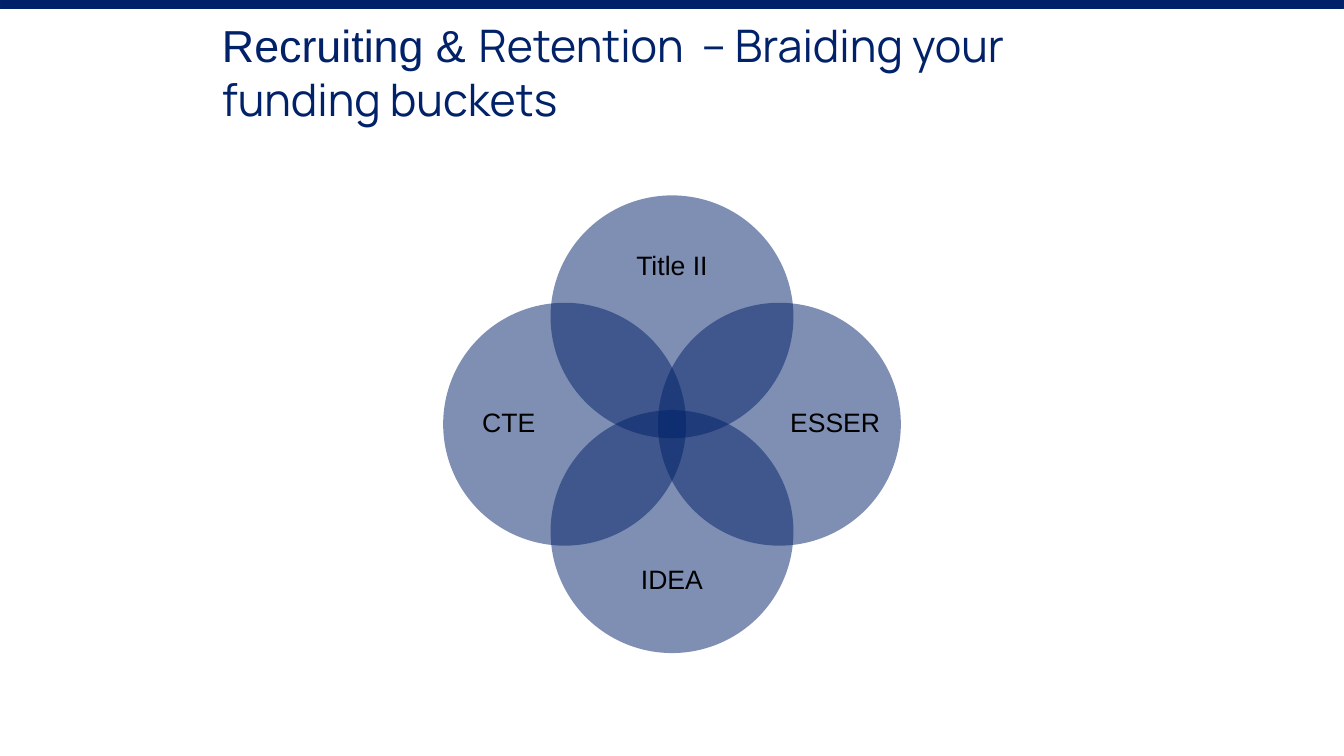
from lxml import etree
from pptx import Presentation
from pptx.dml.color import RGBColor
from pptx.enum.shapes import MSO_SHAPE
from pptx.enum.text import MSO_ANCHOR, PP_ALIGN
from pptx.oxml.ns import qn
from pptx.util import Pt

RECT, OVAL = MSO_SHAPE.RECTANGLE, MSO_SHAPE.OVAL
TOP, MIDDLE = MSO_ANCHOR.TOP, MSO_ANCHOR.MIDDLE
LEFT, CENTER = PP_ALIGN.LEFT, PP_ALIGN.CENTER

NAVY, BAR_NAVY, BLACK = "012169", "002069", "000000"
SLIDE_W, SLIDE_H = 960, 540
CENTER_X, CENTER_Y = 480, 303
DIAMETER = 173.5
CIRCLE_OFFSET = 76.7
# name, x direction, y direction, label offset, label width, label height
FUNDS = [
    ("Title II", 0, -1, 112.3, 133, 55),
    ("ESSER", 1, 0, 116.6, 67, 133),
    ("IDEA", 0, 1, 112.3, 133, 55),
    ("CTE", -1, 0, 116.6, 67, 133),
]


def rgb(color):
    return RGBColor.from_string(color)


def add_filled(slide, kind, x, y, w, h, fill, line=None, opacity=None):
    """Add a preset shape; opacity is a percentage."""
    s = slide.shapes.add_shape(kind, Pt(x), Pt(y), Pt(w), Pt(h))
    s.shadow.inherit = False
    s.fill.solid()
    s.fill.fore_color.rgb = rgb(fill)
    if line:
        s.line.color.rgb = rgb(line)
        s.line.width = Pt(0.75)
    else:
        s.line.fill.background()
    if opacity is not None:
        color = s.fill._xPr.find(qn("a:solidFill"))[0]
        etree.SubElement(color, qn("a:alpha"), val=str(opacity * 1000))


def add_text(slide, x, y, w, h, runs, size, color, align=LEFT, anchor=TOP, spacing=1.0):
    """Add a one-paragraph text box; runs are (text, font name) pairs."""
    tf = slide.shapes.add_textbox(Pt(x), Pt(y), Pt(w), Pt(h)).text_frame
    frame_format = dict(word_wrap=True, vertical_anchor=anchor, margin_left=0,
                        margin_top=0, margin_right=0, margin_bottom=0)
    for name, value in frame_format.items():
        setattr(tf, name, value)
    p = tf.paragraphs[0]
    p.alignment = align
    p.line_spacing = spacing
    for text, font in runs:
        r = p.add_run()
        r.text = text
        r.font.name = font
        r.font.size = Pt(size)
        r.font.color.rgb = rgb(color)


def add_fund(slide, name, dx, dy, offset, w, h):
    """Add one circle of the Venn diagram with its label."""
    add_filled(slide, OVAL,
               CENTER_X + dx * CIRCLE_OFFSET - DIAMETER / 2,
               CENTER_Y + dy * CIRCLE_OFFSET - DIAMETER / 2,
               DIAMETER, DIAMETER, NAVY, opacity=50)
    add_text(slide, CENTER_X + dx * offset - w / 2, CENTER_Y + dy * offset - h / 2,
             w, h, [(name, "Arial")], 19, BLACK, CENTER, MIDDLE, 0.9)


def main():
    prs = Presentation()
    prs.slide_width, prs.slide_height = Pt(SLIDE_W), Pt(SLIDE_H)
    slide = prs.slides.add_slide(prs.slide_layouts[6])
    add_filled(slide, RECT, 0, 0, SLIDE_W, 6, BAR_NAVY, line=NAVY)
    for fund in FUNDS:
        add_fund(slide, *fund)
    title = [("Recruiting & ", "Arial"),
             ("Retention  – Braiding your funding buckets", "Manrope")]
    add_text(slide, 158.5, 13, 649, 78, title, 32, NAVY)
    prs.save("out.pptx")


if __name__ == "__main__":
    main()
